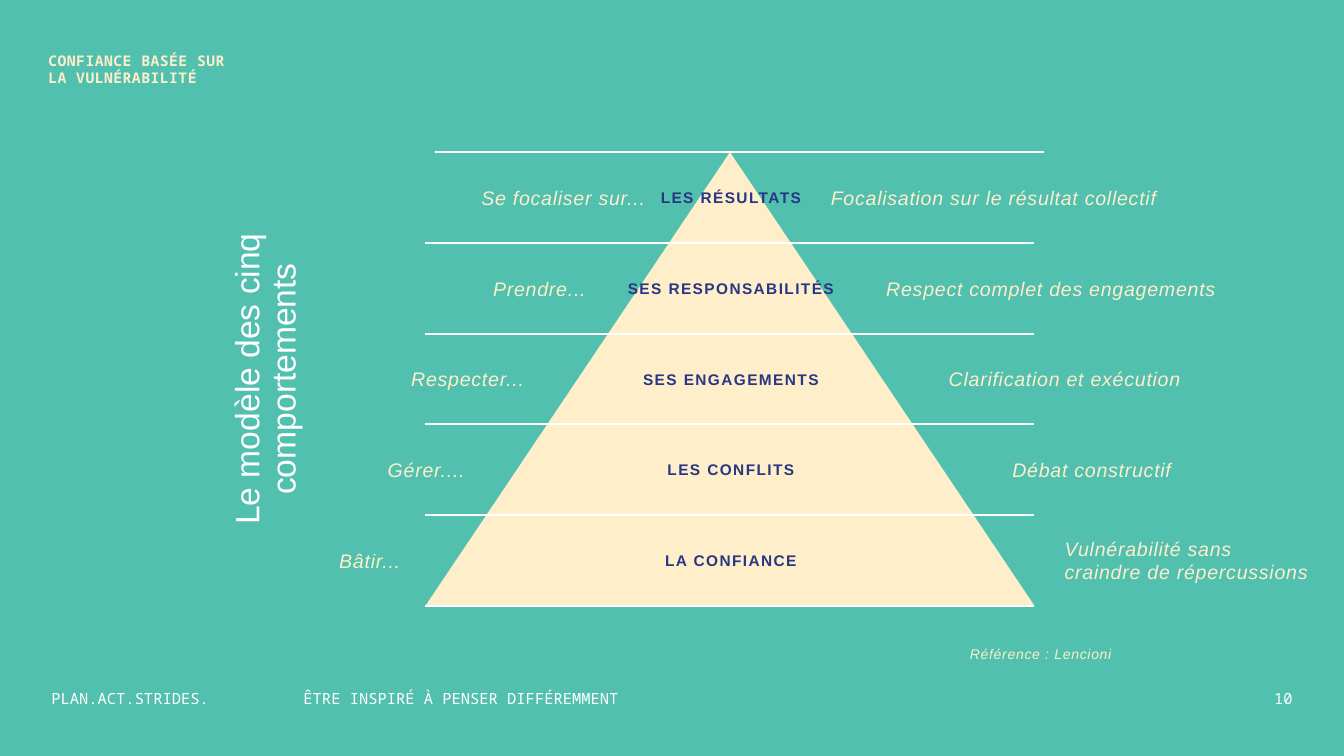
from pptx import Presentation
from pptx.dml.color import RGBColor
from pptx.enum.shapes import MSO_CONNECTOR, MSO_SHAPE
from pptx.enum.text import MSO_ANCHOR, PP_ALIGN
from pptx.oxml.ns import qn
from pptx.util import Inches, Pt
from lxml import etree

LEFT, MID, RIGHT = PP_ALIGN.LEFT, PP_ALIGN.CENTER, PP_ALIGN.RIGHT
TOP, MIDDLE = MSO_ANCHOR.TOP, MSO_ANCHOR.MIDDLE
LINE = MSO_CONNECTOR.STRAIGHT
PEAK = MSO_SHAPE.ISOSCELES_TRIANGLE
TEAL, CREAM, NAVY, WHITE = "51C0AF", "FEEECA", "283683", "FFFFFF"
SANS, MONO = "Arial", "Noto Sans Mono"


def color(code):
    return RGBColor.from_string(code)


class Canvas:
    def __init__(self, slide):
        self.slide = slide
        fill = slide.background.fill
        fill.solid()
        fill.fore_color.rgb = color(TEAL)

    def text(self, words, box, size, tint=CREAM, face=SANS, align=LEFT,
             anchor=TOP, wrap=True, bold=False, italic=False, gap=0, inset=0):
        shape = self.slide.shapes.add_textbox(*map(Inches, box))
        frame = shape.text_frame
        frame.word_wrap = wrap
        frame.vertical_anchor = anchor
        frame.margin_left = frame.margin_right = Inches(2 * inset)
        frame.margin_top = frame.margin_bottom = Inches(inset)
        para = frame.paragraphs[0]
        para.text = words
        para.alignment = align
        font = para.font
        font.name, font.size = face, Pt(size)
        font.bold, font.italic = bold, italic
        font.color.rgb = color(tint)
        if gap:
            font._rPr.set("spc", str(int(gap * 100)))
        return shape

    def label(self, words, left, top, width, align=LEFT, size=14):
        self.text(words, (left, top, width, 0.3), size, align=align,
                  anchor=MIDDLE, wrap=False, italic=True, gap=0.5)

    def level(self, words, top):
        self.text(words, (5.8, top, 2.9, 0.3), 11, NAVY, align=MID,
                  anchor=MIDDLE, wrap=False, bold=True, gap=1)

    def title(self, words, box):
        shape = self.text(words, box, 24, WHITE, align=MID, inset=0.05)
        shape.rotation = 270
        shape.text_frame.paragraphs[0].line_spacing = 0.9

    def footer(self, words, left, width, align=LEFT):
        self.text(words, (left, 6.84, width, 0.19), 11, WHITE, MONO, align)

    def peak(self, box):
        shape = self.slide.shapes.add_shape(PEAK, *map(Inches, box))
        shape.shadow.inherit = False
        shape.fill.solid()
        shape.fill.fore_color.rgb = color(CREAM)
        shape.line.fill.background()

    def rule(self, left, top, width):
        line = self.slide.shapes.add_connector(
            LINE, Inches(left), Inches(top), Inches(left + width), Inches(top))
        line.line.color.rgb = color(WHITE)
        line.line.width = Pt(1.5)
        etree.SubElement(line._element.spPr, qn("a:effectLst"))


LEVELS = [
    ("LES RÉSULTATS", "Se focaliser sur...", 6.4,
     "Focalisation sur le résultat collectif", 8.24, 3.5),
    ("SES RESPONSABILITÉS", "Prendre...", 5.81,
     "Respect complet des engagements", 8.79, 3.5),
    ("SES ENGAGEMENTS", "Respecter...", 5.2,
     "Clarification et exécution", 9.41, 2.6),
    ("LES CONFLITS", "Gérer....", 4.61, "Débat constructif", 10.04, 1.8),
    ("LA CONFIANCE", "Bâtir...", 3.97,
     "Vulnérabilité sans\ncraindre de répercussions", 10.56, 2.6),
]
BASE, APEX, STEP, SPAN, VERB = 4.22, 1.51, 0.9, 6.04, 1.79


def main():
    deck = Presentation()
    deck.slide_width, deck.slide_height = Inches(13.33), Inches(7.5)
    page = Canvas(deck.slides.add_slide(deck.slide_layouts[6]))

    page.footer("PLAN.ACT.STRIDES.", 0.51, 2.12)
    page.footer("ÊTRE INSPIRÉ À PENSER DIFFÉREMMENT", 3.01, 3.35)
    page.footer("10", 10.7, 2.12, RIGHT)
    page.title("Le modèle des cinq comportements", (0.22, 3.53, 4.49, 0.46))

    page.peak((BASE, APEX, SPAN, STEP * len(LEVELS)))
    for row in range(len(LEVELS) + 1):
        page.rule(BASE if row else 4.31, APEX + STEP * row, SPAN)
    for row, (name, verb, end, goal, start, width) in enumerate(LEVELS):
        top = APEX + STEP * row + 0.3
        page.level(name, top)
        page.label(verb, end - VERB, top, VERB, RIGHT)
        page.label(goal, start, top, width)

    page.text("CONFIANCE BASÉE SUR\nLA VULNÉRABILITÉ", (0.48, 0.51, 2.33, 0.47),
              10.5, face=MONO, bold=True, gap=0.4)
    page.label("Référence\u00a0: Lencioni".replace("\u00a0", " "),
               9.62, 6.34, 1.79, size=10)
    deck.save("out.pptx")


if __name__ == "__main__":
    main()
